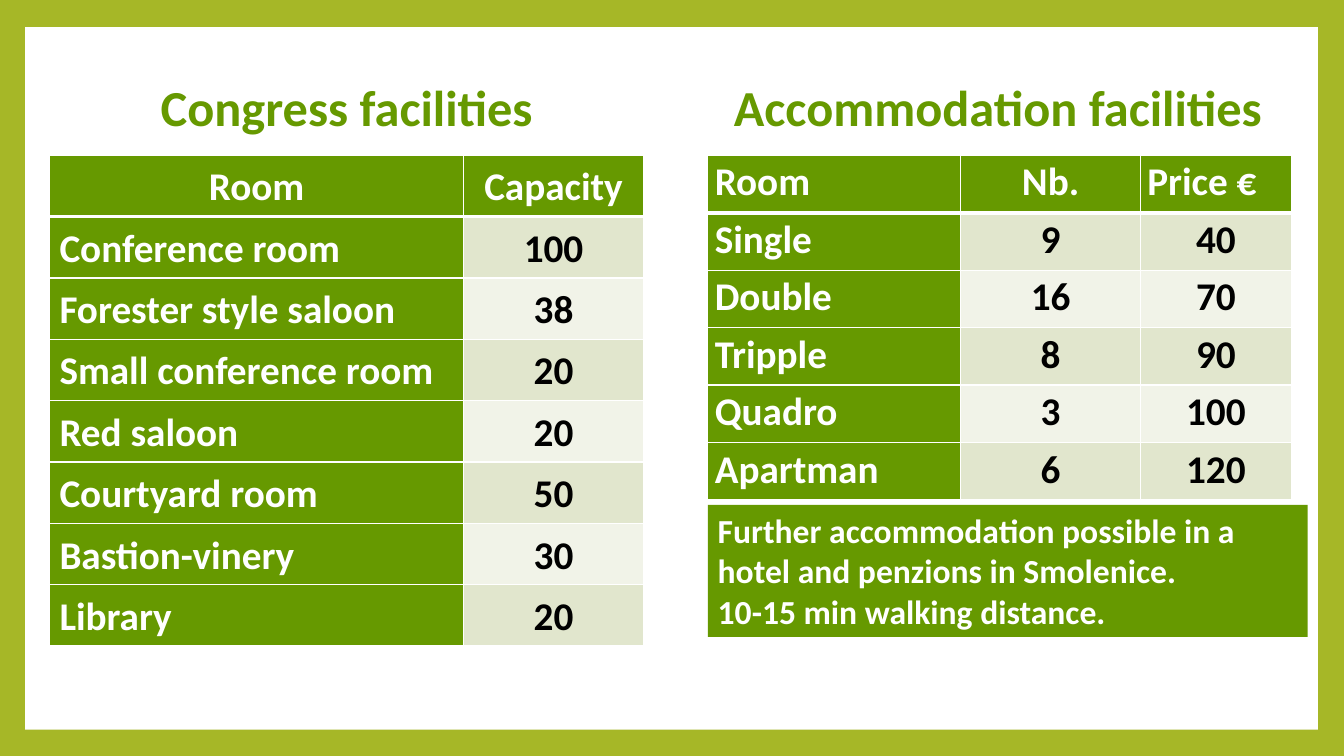
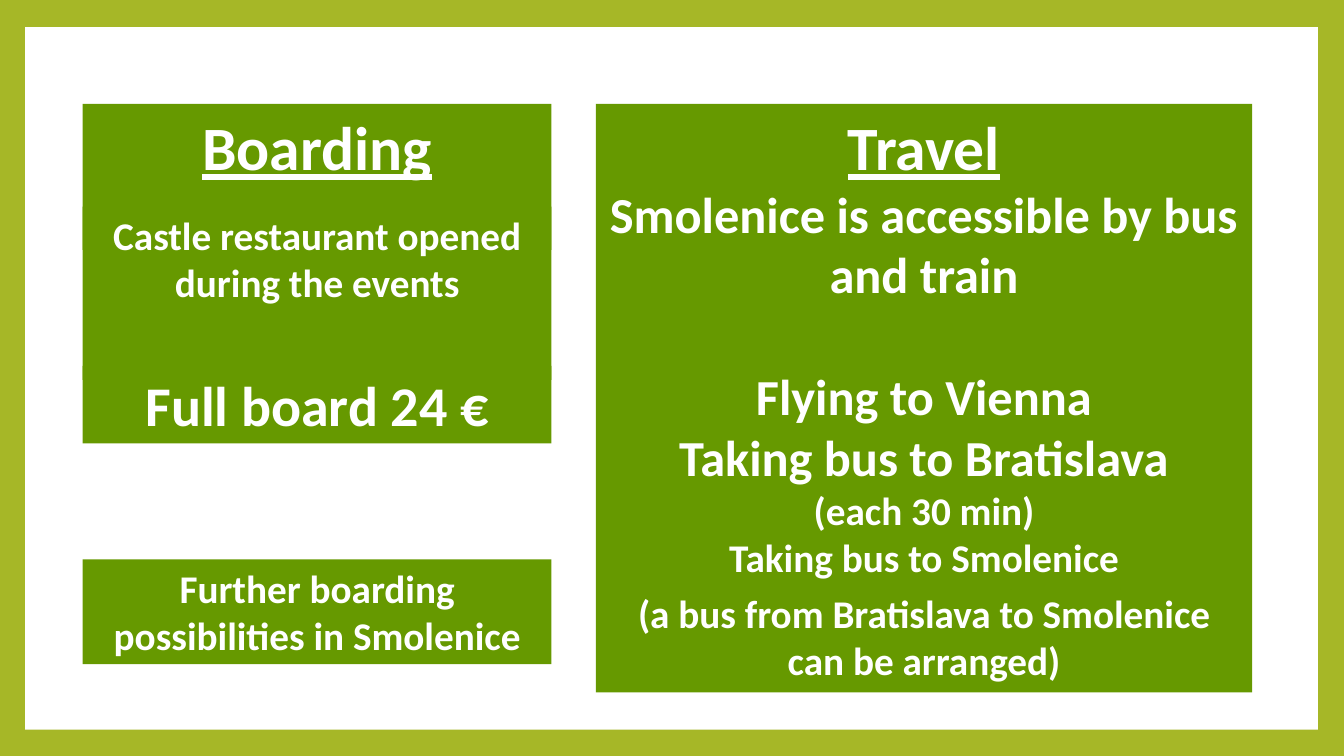
from dataclasses import dataclass
from lxml.etree import SubElement as Sub
from pptx import Presentation
from pptx.dml.color import RGBColor as Rgb
from pptx.enum.shapes import MSO_SHAPE as Kind
from pptx.enum.text import MSO_ANCHOR as Anchor, MSO_AUTO_SIZE as Fit, PP_ALIGN as Align
from pptx.oxml.ns import qn
from pptx.util import Inches, Pt


@dataclass(frozen=True)
class Theme:
    frame: Rgb = Rgb.from_string("A6B727")
    green: Rgb = Rgb.from_string("669900")
    white: Rgb = Rgb.from_string("FFFFFF")
    black: Rgb = Rgb.from_string("000000")
    bands: tuple = (Rgb.from_string("E1E6CD"), Rgb.from_string("F1F3E8"))
    font: str = "Calibri"
    head: int = 44
    price: int = 40
    title: int = 36
    text: int = 28
    note: int = 24


@dataclass(frozen=True)
class Line:
    text: str
    size: int
    under: bool = False
    gap: int = 0


THEME = Theme()
ALIGN = {"l": Align.LEFT, "c": Align.CENTER}

HALLS = [
    ("Room", "Capacity"),
    ("Conference room", "100"),
    ("Forester style saloon", "38"),
    ("Small conference room", "20"),
    ("Red saloon", "20"),
    ("Courtyard room", "50"),
    ("Bastion-vinery", "30"),
    ("Library", "20"),
]
ROOMS = [
    ("Room", "Nb.", "Price €"),
    ("Single", "9", "40"),
    ("Double", "16", "70"),
    ("Tripple", "8", "90"),
    ("Quadro", "3", "100"),
    ("Apartman", "6", "120"),
]
NOTE = [
    Line("Further accommodation possible in a hotel and penzions in Smolenice.", THEME.note),
    Line("10-15 min walking distance.", THEME.note),
]
TRAVEL = [
    Line("Travel", THEME.head, under=True),
    Line("Smolenice is accessible by bus and train", THEME.title),
    Line("Flying to Vienna", THEME.title, gap=44),
    Line("Taking bus to Bratislava", THEME.title),
    Line("(each 30 min)", THEME.text),
    Line("Taking bus to Smolenice", THEME.text),
    Line("(a bus from Bratislava to Smolenice can be arranged)", THEME.text, gap=6),
]


def style(par, size, color, align):
    par.alignment = ALIGN[align]
    font = par.font
    font.name, font.size, font.bold = THEME.font, Pt(size), True
    font.color.rgb = color


def place(shape, at):
    shape.left, shape.top, shape.width, shape.height = map(Inches, at)


def write(shape, lines, color, align="c"):
    frame = shape.text_frame
    frame.word_wrap, frame.auto_size = True, Fit.NONE
    frame.vertical_anchor = Anchor.TOP
    for num, line in enumerate(lines):
        par = frame.add_paragraph() if num else frame.paragraphs[0]
        par.text = line.text
        style(par, line.size, color, align)
        par.font.underline = line.under
        par.space_before = Pt(line.gap)


def paint(shape):
    shape.fill.solid()
    shape.fill.fore_color.rgb = THEME.green


def box(slide, at, lines, align="c"):
    shape = slide.shapes.add_shape(Kind.RECTANGLE, *map(Inches, at))
    shape.shadow.inherit = False
    shape.line.fill.background()
    paint(shape)
    write(shape, lines, THEME.white, align)


def plain(shape):
    for par in shape.text_frame.paragraphs:
        props = par._p.get_or_add_pPr()
        props.set("marL", "0")
        props.set("indent", "0")
        props.insert_element_before(props.makeelement(qn("a:buNone"), {}), "a:defRPr")


def edge(cell, row):
    props = cell._tc.get_or_add_tcPr()
    wide = {"T": row == 1, "B": row == 0}
    for side in "LRTB":
        width = Pt(3 if wide.get(side) else 1)
        line = Sub(props, qn(f"a:ln{side}"), w=str(width))
        Sub(Sub(line, qn("a:solidFill")), qn("a:srgbClr"), val=str(THEME.white))


def grid(slide, left, top, cols, high, data, heads, pad):
    size = sum(cols), high * len(data)
    table = slide.shapes.add_table(len(data), len(cols), *map(Inches, (left, top, *size))).table
    for col, width in zip(table.columns, cols):
        col.width = Inches(width)
    for row, texts in enumerate(data):
        table.rows[row].height = Inches(high)
        for col, text in enumerate(texts):
            cell = table.cell(row, col)
            cell.margin_left = cell.margin_right = Inches(pad[0])
            cell.margin_top = cell.margin_bottom = Inches(pad[1])
            edge(cell, row)
            label = row == 0 or col == 0
            cell.fill.solid()
            cell.fill.fore_color.rgb = THEME.green if label else THEME.bands[(row - 1) % 2]
            par = cell.text_frame.paragraphs[0]
            par.text = text
            par.line_spacing = 1.07
            align = heads[col] if row == 0 else "c" if col else "l"
            style(par, THEME.text, THEME.white if label else THEME.black, align)


def setup(deck, slide):
    master = deck.slide_master
    back = master.background.fill
    back.solid()
    back.fore_color.rgb = THEME.frame
    panel = slide.shapes.add_shape(Kind.RECTANGLE, *map(Inches, (0.25, 0.27, 12.82, 6.97)))
    panel.shadow.inherit = False
    panel.line.fill.background()
    panel.fill.solid()
    panel.fill.fore_color.rgb = THEME.white
    master.shapes.element.insert(2, panel.element)


def rooms(slide):
    title = slide.shapes.title
    place(title, (1.32, 0.71, 4.24, 0.71))
    write(title, [Line("Congress facilities", THEME.title)], THEME.green)
    label = slide.shapes.add_textbox(*map(Inches, (7.02, 0.71, 5.76, 0.71)))
    write(label, [Line("Accommodation facilities", THEME.title)], THEME.green)
    grid(slide, 0.49, 1.54, (4.11, 1.78), 0.6, HALLS, "cc", (0.1, 0.05))
    grid(slide, 7.02, 1.54, (2.51, 1.78, 1.5), 0.57, ROOMS, "lcl", (0.07, 0))
    box(slide, (7.02, 5.01, 5.95, 1.31), NOTE, "l")


def travel(slide):
    left, width = 0.82, 4.65
    title, body = slide.placeholders
    place(title, (left, 1.03, width, 1.45))
    paint(title)
    write(title, [Line("Boarding", THEME.head, under=True)], THEME.white)
    place(body, (5.91, 1.03, 6.51, 5.84))
    paint(body)
    write(body, TRAVEL, THEME.white)
    plain(body)
    for top, high, text, size in (
        (3.63, 0.77, "Full board 24 €", THEME.price),
        (2.05, 1.72, "Castle restaurant opened during the events", THEME.text),
        (5.55, 1.04, "Further boarding possibilities in Smolenice", THEME.text),
    ):
        box(slide, (left, top, width, high), [Line(text, size)])


def main():
    deck = Presentation()
    deck.slide_width, deck.slide_height = Inches(13.33), Inches(7.5)
    first = deck.slides.add_slide(deck.slide_layouts[5])
    setup(deck, first)
    rooms(first)
    travel(deck.slides.add_slide(deck.slide_layouts[1]))
    deck.save("out.pptx")


if __name__ == "__main__":
    main()
